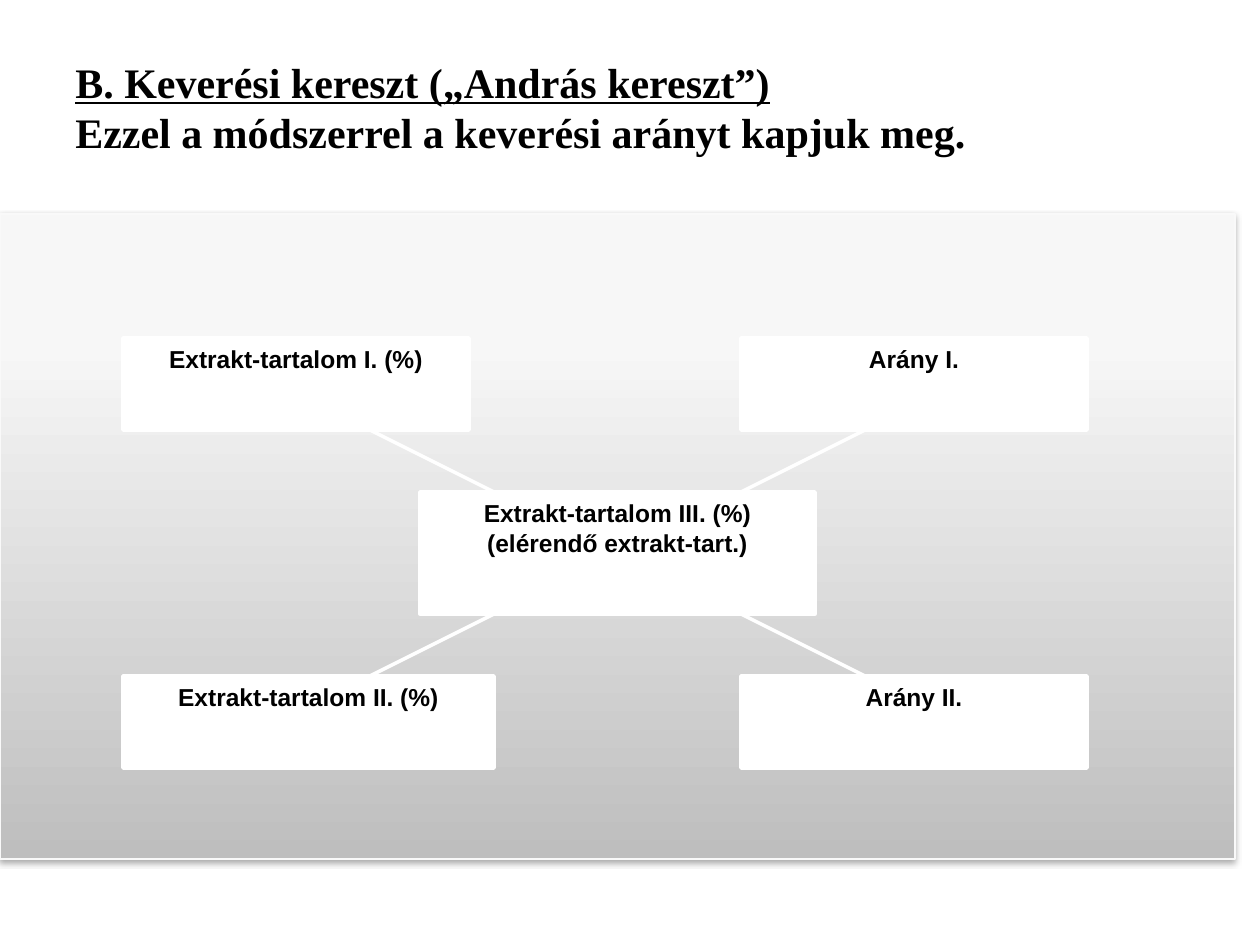
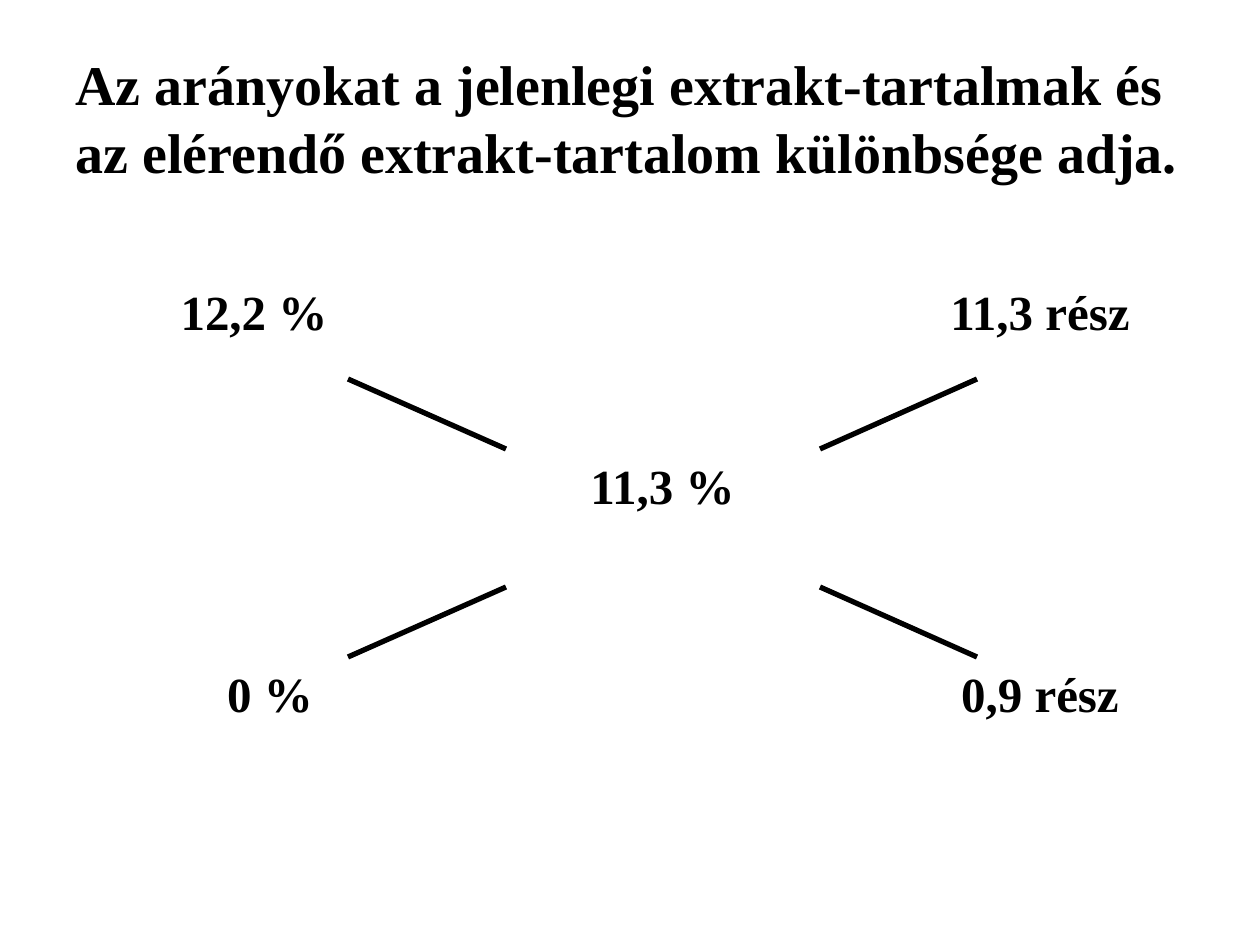
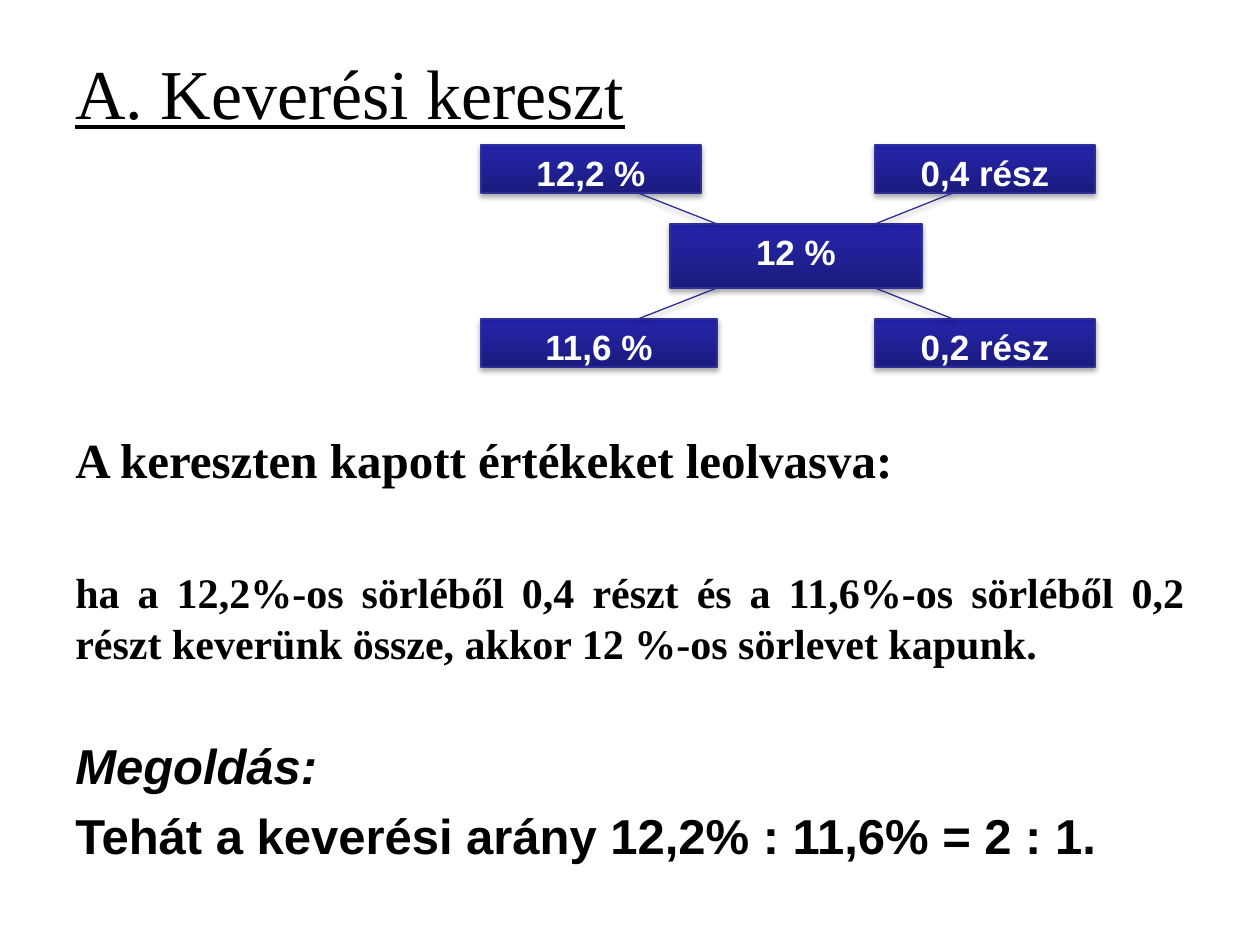
"""Build three slides that explain the mixing cross."""
from copy import deepcopy
from dataclasses import dataclass

from lxml.etree import SubElement
from pptx import Presentation
from pptx.dml.color import RGBColor
from pptx.enum.shapes import MSO_CONNECTOR, MSO_SHAPE
from pptx.enum.text import MSO_ANCHOR, PP_ALIGN
from pptx.oxml.ns import qn
from pptx.util import Emu, Pt

SCALE = 914400 / 126


@dataclass(frozen=True)
class Theme:
    serif: str = "Times New Roman"
    sans: str = "Arial"
    black: str = "000000"
    white: str = "FFFFFF"
    navy_line: str = "2F2F98"
    panel_line: str = "F9F9F9"
    navy: tuple = ((0, "1B1B7E"), (0.8, "2323A3"), (1, "2020A6"))
    grey: tuple = ((0, "BEBEBE"), (0.8, "F7F7F7"), (1, "F8F8F8"))
    label: int = 14
    value: int = 20
    text: int = 24
    large: int = 28
    heading: int = 32
    display: int = 40


@dataclass(frozen=True)
class CrossStyle:
    fill: object
    line: str
    width: float
    font: str
    size: int
    color: str
    box_line: bool = True
    shadow: bool = False


def px(n):
    return Emu(round(n * SCALE))


class Deck:
    def __init__(self, theme):
        self.t = theme
        self.prs = Presentation()
        self.prs.slide_width, self.prs.slide_height = px(1260), px(945)
        self.s = None

    def slide(self):
        self.s = self.prs.slides.add_slide(self.prs.slide_layouts[6])

    def format(self, p, size, font, color, bold=True, italic=False, underline=False):
        for r in p.runs:
            r.font.size, r.font.name = Pt(size), font
            r.font.bold, r.font.italic, r.font.underline = bold, italic, underline
            r.font.color.rgb = RGBColor.from_string(color)

    def textbox(self, x, y, w, h, text):
        tf = self.s.shapes.add_textbox(px(x), px(y), px(w), px(h)).text_frame
        tf.word_wrap = True
        tf.text = text
        return tf

    def title(self, text, height, size, bold=True, underline=False):
        tf = self.textbox(63, 38, 1134, height, text)
        tf.vertical_anchor = MSO_ANCHOR.MIDDLE
        p = tf.paragraphs[0]
        self.format(p, size, self.t.serif, self.t.black, bold)
        p.runs[0].font.underline = underline

    def body(self, x, y, w, h, items):
        tf = self.textbox(x, y, w, h, "\n".join(item[0] for item in items))
        for p, (_, size, font, before, align, italic) in zip(tf.paragraphs, items):
            p.space_before, p.alignment = Pt(before), align
            self.format(p, size, font, self.t.black, italic=italic)

    def shadow(self, shape):
        effects = shape._element.spPr.find(qn("a:effectLst"))
        outer = SubElement(effects, qn("a:outerShdw"), blurRad="40000",
                           dist="23000", dir="5400000", rotWithShape="0")
        color = SubElement(outer, qn("a:srgbClr"), val=self.t.black)
        SubElement(color, qn("a:alpha"), val="35000")

    def paint(self, fill, paint):
        if isinstance(paint, str):
            fill.solid()
            fill.fore_color.rgb = RGBColor.from_string(paint)
            return
        fill.gradient()
        fill.gradient_angle = 90
        stops = fill._xPr.find(qn("a:gradFill")).find(qn("a:gsLst"))
        stops.append(deepcopy(stops[0]))
        for stop, (position, color) in zip(fill.gradient_stops, paint):
            stop.position = position
            stop.color.rgb = RGBColor.from_string(color)

    def stroke(self, line, color, width):
        line.color.rgb = RGBColor.from_string(color)
        line.width = Pt(width)

    def rect(self, x, y, w, h, fill, line=None, width=0.75, shadow=False):
        sp = self.s.shapes.add_shape(MSO_SHAPE.RECTANGLE, px(x), px(y), px(w), px(h))
        sp.shadow.inherit = False
        self.paint(sp.fill, fill)
        if line:
            self.stroke(sp.line, line, width)
        else:
            sp.line.fill.background()
        if shadow:
            self.shadow(sp)
        return sp

    def box(self, x, y, w, h, text, style):
        line = style.line if style.box_line else None
        sp = self.rect(x, y, w, h, style.fill, line, style.width, style.shadow)
        tf = sp.text_frame
        tf.word_wrap = True
        tf.vertical_anchor = MSO_ANCHOR.TOP
        tf.text = text
        for p in tf.paragraphs:
            p.alignment = PP_ALIGN.CENTER
            self.format(p, style.size, style.font, style.color)

    def line(self, x1, y1, x2, y2, style):
        cn = self.s.shapes.add_connector(MSO_CONNECTOR.STRAIGHT, px(x1), px(y1), px(x2), px(y2))
        SubElement(cn._element.spPr, qn("a:effectLst"))
        self.stroke(cn.line, style.line, style.width)
        if style.shadow:
            self.shadow(cn)

    def cross(self, x, y, w, h, texts, style):
        """Lay five boxes and four arms on a grid of 39 columns and 28 rows."""
        def col(n):
            return round(x + w * n / 39)

        def row(n):
            return round(y + h * n / 28)

        cells = ((0, 0, 14, 6), (0, 22, 15, 28), (12, 10, 28, 18),
                 (25, 0, 39, 6), (25, 22, 39, 28))
        arms = ((10, 6, 15, 10), (25, 18, 30, 22), (30, 6, 25, 10), (15, 18, 10, 22))
        for text, (c1, r1, c2, r2) in zip(texts, cells):
            self.box(col(c1), row(r1), col(c2) - col(c1), row(r2) - row(r1), text, style)
        for c1, r1, c2, r2 in arms:
            self.line(col(c1), row(r1), col(c2), row(r2), style)


def main():
    t = Theme()
    deck = Deck(t)

    deck.slide()
    deck.title("B. Keverési kereszt („András kereszt”)\v"
               "Ezzel a módszerrel a keverési arányt kapjuk meg.", 137, t.text, underline=True)
    deck.rect(0, 214, 1235, 645, t.grey, t.panel_line, shadow=True)
    deck.cross(123, 338, 964, 430,
               ("Extrakt-tartalom I. (%)", "Extrakt-tartalom II. (%)",
                "Extrakt-tartalom III. (%)\n(elérendő extrakt-tart.)", "Arány I.", "Arány II."),
               CrossStyle(t.white, t.white, 2, t.sans, t.label, t.black))

    deck.slide()
    deck.title("Az arányokat a jelenlegi extrakt-tartalmak és az elérendő "
               "extrakt-tartalom különbsége adja.", 158, t.heading)
    deck.cross(34, 275, 1226, 486, ("12,2 %", "0 %", "11,3 %", "11,3 rész", "0,9 rész"),
               CrossStyle(t.white, t.black, 3, t.serif, t.large, t.black, box_line=False))

    deck.slide()
    deck.title("A. Keverési kereszt", 107, t.display, bold=False, underline=True)
    deck.body(63, 423, 1134, 522, (
        ("A kereszten kapott értékeket leolvasva:", t.large, t.serif, 6, PP_ALIGN.LEFT, False),
        ("ha a 12,2%-os sörléből 0,4 részt és a 11,6%-os sörléből 0,2 részt keverünk össze, "
         "akkor 12 %-os sörlevet kapunk.", t.text, t.serif, 45, PP_ALIGN.JUSTIFY, False),
        ("Megoldás:", t.large, t.sans, 39, PP_ALIGN.LEFT, True),
        ("Tehát a keverési arány 12,2% : 11,6% = 2 : 1.", t.large, t.sans, 6,
         PP_ALIGN.LEFT, False)))
    deck.cross(481, 145, 614, 222, ("12,2 %", "11,6 %", "12 %", "0,4 rész", "0,2 rész"),
               CrossStyle(t.navy, t.navy_line, 0.75, t.sans, t.value, t.white, shadow=True))

    deck.prs.save("out.pptx")


if __name__ == "__main__":
    main()
